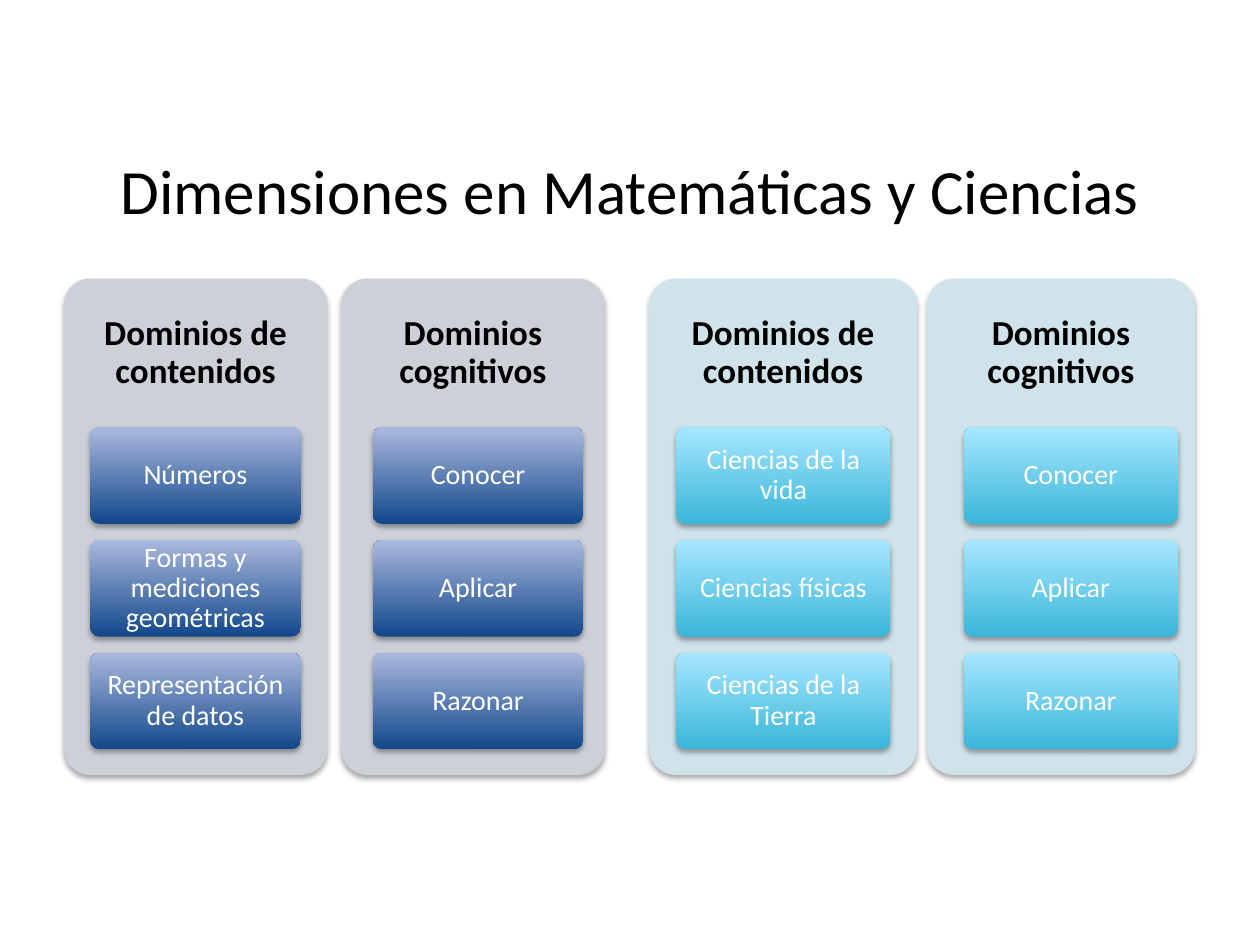
from lxml.etree import SubElement
from pptx import Presentation
from pptx.dml.color import RGBColor
from pptx.enum.shapes import MSO_SHAPE
from pptx.enum.text import MSO_ANCHOR, PP_ALIGN
from pptx.oxml.ns import qn
from pptx.util import Pt


def paint(code):
    """Turn a hex string into a colour."""
    return RGBColor.from_string(code)


class Board:
    """Holds the style and the current slide."""

    face = "Calibri"
    black = "000000"
    white = "FFFFFF"

    def __init__(self, slide):
        self.slide = slide

    def letter(self, shape, text, size, color, pad, bold=False, space=0.9):
        """Fill a shape's frame with one centred paragraph."""
        frame = shape.text_frame
        frame.word_wrap = True
        frame.vertical_anchor = MSO_ANCHOR.MIDDLE
        frame.margin_left = frame.margin_right = Pt(pad[0])
        frame.margin_top = frame.margin_bottom = Pt(pad[1])
        para = frame.paragraphs[0]
        para.text = text
        para.alignment = PP_ALIGN.CENTER
        para.line_spacing = space
        font = para.font
        font.name, font.size, font.bold = self.face, Pt(size), bold
        font.color.rgb = paint(color)

    def label(self, box, text, size, **style):
        """Add a text box."""
        shape = self.slide.shapes.add_textbox(*map(Pt, box))
        self.letter(shape, text, size, self.black, (6, 6), **style)

    def block(self, box):
        """Add a rounded block with a soft shadow."""
        shape = self.slide.shapes.add_shape(
            MSO_SHAPE.ROUNDED_RECTANGLE, *map(Pt, box))
        shape.adjustments[0] = 0.1
        shape.line.fill.background()
        shape.shadow.inherit = False
        effects = shape._element.spPr.find(qn("a:effectLst"))
        shade = SubElement(effects, qn("a:outerShdw"), blurRad=str(Pt(3.1)),
                           dist=str(Pt(1.8)), dir="5400000", rotWithShape="0")
        tint = SubElement(shade, qn("a:srgbClr"), val=self.black)
        SubElement(tint, qn("a:alpha"), val="35000")
        return shape

    def panel(self, box, color):
        """Add a plain panel."""
        fill = self.block(box).fill
        fill.solid()
        fill.fore_color.rgb = paint(color)

    def card(self, box, text, colors):
        """Add a card that shades from its foot to its top."""
        shape = self.block(box)
        shape.fill.gradient()
        shape.fill.gradient_angle = 90
        for stop, color in zip(shape.fill.gradient_stops, colors):
            stop.color.rgb = paint(color)
        self.letter(shape, text, 16, self.white, (3, 2.2))

    def column(self, left, inset, theme, head, items):
        """Add a panel with its heading and cards."""
        color, shades, wide = theme
        top, first, step = 159.2, 244.1, 64.4
        self.panel((left, top, wide, 283.6), color)
        self.label((left, top, wide, 85), head, 20, bold=True)
        for row, text in enumerate(items):
            box = (left + inset, first + row * step, wide * 0.8, 55.4)
            self.card(box, text, shades)


def main():
    """Build the slide."""
    deck = Presentation()
    deck.slide_width, deck.slide_height = Pt(720), Pt(540)
    board = Board(deck.slides.add_slide(deck.slide_layouts[6]))
    board.label((0, 77, 720, 62.6), "Dimensiones en Matemáticas y Ciencias",
                36, space=1)

    maths = ("CDD0D7", ("11478B", "ABB9DE"), 150.5)
    science = ("D0E3EA", ("39B7D8", "A7E6FF"), 153)
    topics, skills = "Dominios de contenidos", "Dominios cognitivos"
    levels = ("Conocer", "Aplicar", "Razonar")
    fields = ("Números", "Formas y mediciones geométricas",
              "Representación de datos")
    areas = ("Ciencias de la vida", "Ciencias físicas",
             "Ciencias de la Tierra")
    board.column(36.5, 15, maths, topics, fields)
    board.column(195, 18, maths, skills, levels)
    board.column(371, 15.5, science, topics, areas)
    board.column(529.8, 20.9, science, skills, levels)
    deck.save("out.pptx")


if __name__ == "__main__":
    main()
